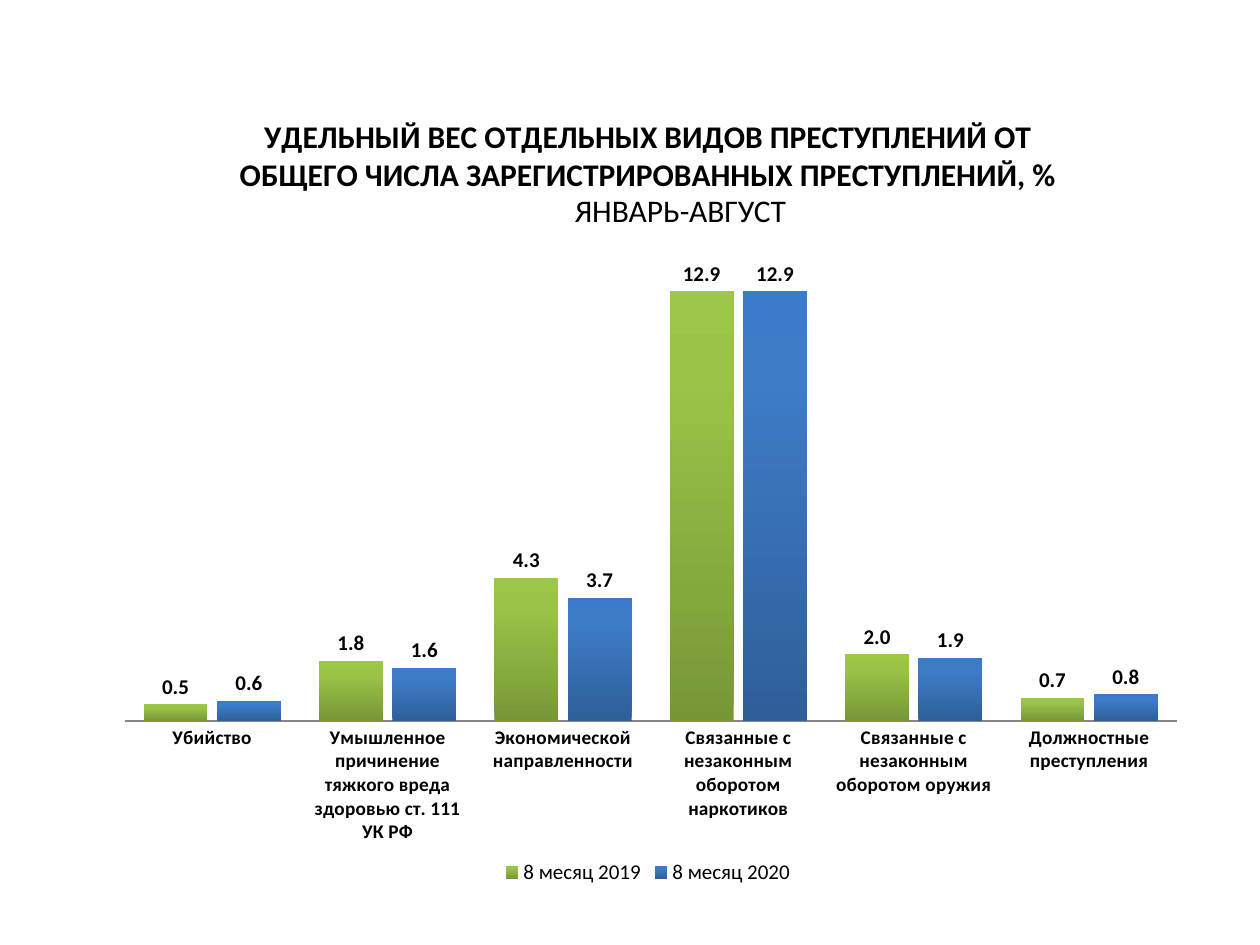
from lxml.etree import SubElement
from pptx import Presentation
from pptx.chart.data import CategoryChartData
from pptx.dml.color import RGBColor
from pptx.enum.chart import XL_CHART_TYPE as ChartType
from pptx.enum.chart import XL_LABEL_POSITION as LabelPos
from pptx.enum.chart import XL_LEGEND_POSITION as LegendPos
from pptx.enum.chart import XL_TICK_MARK as Tick
from pptx.enum.text import MSO_AUTO_SIZE as AutoSize
from pptx.enum.text import PP_ALIGN as Align
from pptx.oxml import parse_xml
from pptx.oxml.ns import nsdecls, qn
from pptx.util import Emu, Pt

EMU_PER_PX = 914400 / 126
FONT = "Calibri"
COLORS = {"text": "000000", "axis": "868686"}
GRADIENTS = {
    "green": [(0, "779737"), (80, "9BC348"), (100, "9DC746")],
    "blue": [(0, "2F5F99"), (80, "3D7CC7"), (100, "3A7CCB")],
}
TITLE = ("УДЕЛЬНЫЙ ВЕС ОТДЕЛЬНЫХ ВИДОВ ПРЕСТУПЛЕНИЙ ОТ ОБЩЕГО ЧИСЛА "
         "ЗАРЕГИСТРИРОВАННЫХ ПРЕСТУПЛЕНИЙ, %")
CATEGORIES = [
    "Убийство",
    "Умышленное причинение тяжкого вреда здоровью ст. 111 УК РФ",
    "Экономической направленности",
    "Связанные с незаконным оборотом наркотиков",
    "Связанные с незаконным оборотом оружия",
    "Должностные преступления",
]
SERIES = [
    ("8 месяц 2019", [0.5, 1.8, 4.3, 12.9, 2.0, 0.7], "green"),
    ("8 месяц 2020", [0.6, 1.6, 3.7, 12.9, 1.9, 0.8], "blue"),
]


def px(n):
    return Emu(round(n * EMU_PER_PX))


def set_font(font, size, bold=False):
    font.name = FONT
    font.size = Pt(size)
    font.bold = bold
    font.color.rgb = RGBColor.from_string(COLORS["text"])


def write(tf, text, size=18, bold=False, align=Align.CENTER):
    p = tf.paragraphs[0]
    p.alignment = align
    r = p.add_run()
    r.text = text
    set_font(r.font, size, bold)


def fill_upward(series, stops):
    """Fill the columns with a gradient that runs from bottom to top."""
    gs = "".join(f'<a:gs pos="{pos * 1000}"><a:srgbClr val="{color}"/></a:gs>'
                 for pos, color in stops)
    grad = parse_xml(f'<a:gradFill {nsdecls("a")} rotWithShape="1"><a:gsLst>{gs}</a:gsLst>'
                     '<a:lin ang="16200000" scaled="0"/></a:gradFill>')
    series.format.fill.background()
    sp_pr = series.format.fill._xPr
    sp_pr.replace(sp_pr.find(qn("a:noFill")), grad)


def place_plot(chart, **box):
    """Fix the inner plot area as fractions of the chart."""
    area = chart._chartSpace.chart.plotArea
    for old in area.findall(qn("c:layout")):
        area.remove(old)
    layout = parse_xml(f'<c:layout {nsdecls("c")}/>')
    area.insert(0, layout)
    manual = SubElement(layout, qn("c:manualLayout"))
    settings = {"layoutTarget": "inner", "xMode": "edge", "yMode": "edge", **box}
    for tag, value in settings.items():
        SubElement(manual, qn(f"c:{tag}")).set("val", str(value))


class SlideBuilder:
    def __init__(self, slide):
        self.slide = slide

    def label(self, text, x, y, w, h):
        tf = self.slide.shapes.add_textbox(px(x), px(y), px(w), px(h)).text_frame
        tf.word_wrap = False
        tf.auto_size = AutoSize.SHAPE_TO_FIT_TEXT
        write(tf, text)

    def column_chart(self, x, y, w, h):
        data = CategoryChartData(number_format="0.0")
        data.categories = CATEGORIES
        for name, values, _ in SERIES:
            data.add_series(name, values)
        chart = self.slide.shapes.add_chart(
            ChartType.COLUMN_CLUSTERED, px(x), px(y), px(w), px(h), data).chart
        set_font(chart.font, 18)
        chart.has_title = True
        write(chart.chart_title.text_frame, TITLE, bold=True)
        chart.chart_title.include_in_layout = False
        place_plot(chart, x=0.018, y=0.21, w=0.969, h=0.58)

        chart.has_legend = True
        chart.legend.position = LegendPos.BOTTOM
        chart.legend.include_in_layout = False
        set_font(chart.legend.font, 12)

        self.axes(chart)
        plot = chart.plots[0]
        plot.gap_width, plot.overlap = 60, -15
        plot.vary_by_categories = False
        for series, (_, _, color) in zip(plot.series, SERIES):
            fill_upward(series, GRADIENTS[color])
            labels = series.data_labels
            labels.show_value = True
            labels.position = LabelPos.OUTSIDE_END
            labels.number_format, labels.number_format_is_linked = "0.0", False
            set_font(labels.font, 12, bold=True)

    def axes(self, chart):
        cat = chart.category_axis
        cat.major_tick_mark = cat.minor_tick_mark = Tick.NONE
        cat.format.line.color.rgb = RGBColor.from_string(COLORS["axis"])
        cat.format.line.width = Pt(0.75)
        set_font(cat.tick_labels.font, 11, bold=True)
        val = chart.value_axis
        val.minimum_scale, val.maximum_scale = 0, 14
        val.has_major_gridlines = False
        val.visible = False


def main():
    prs = Presentation()
    prs.slide_width, prs.slide_height = px(1260), px(945)
    builder = SlideBuilder(prs.slides.add_slide(prs.slide_layouts[6]))
    builder.column_chart(105, 86, 1086, 804)
    builder.label("ЯНВАРЬ-АВГУСТ", 561, 185, 239, 50)
    prs.save("out.pptx")


if __name__ == "__main__":
    main()
